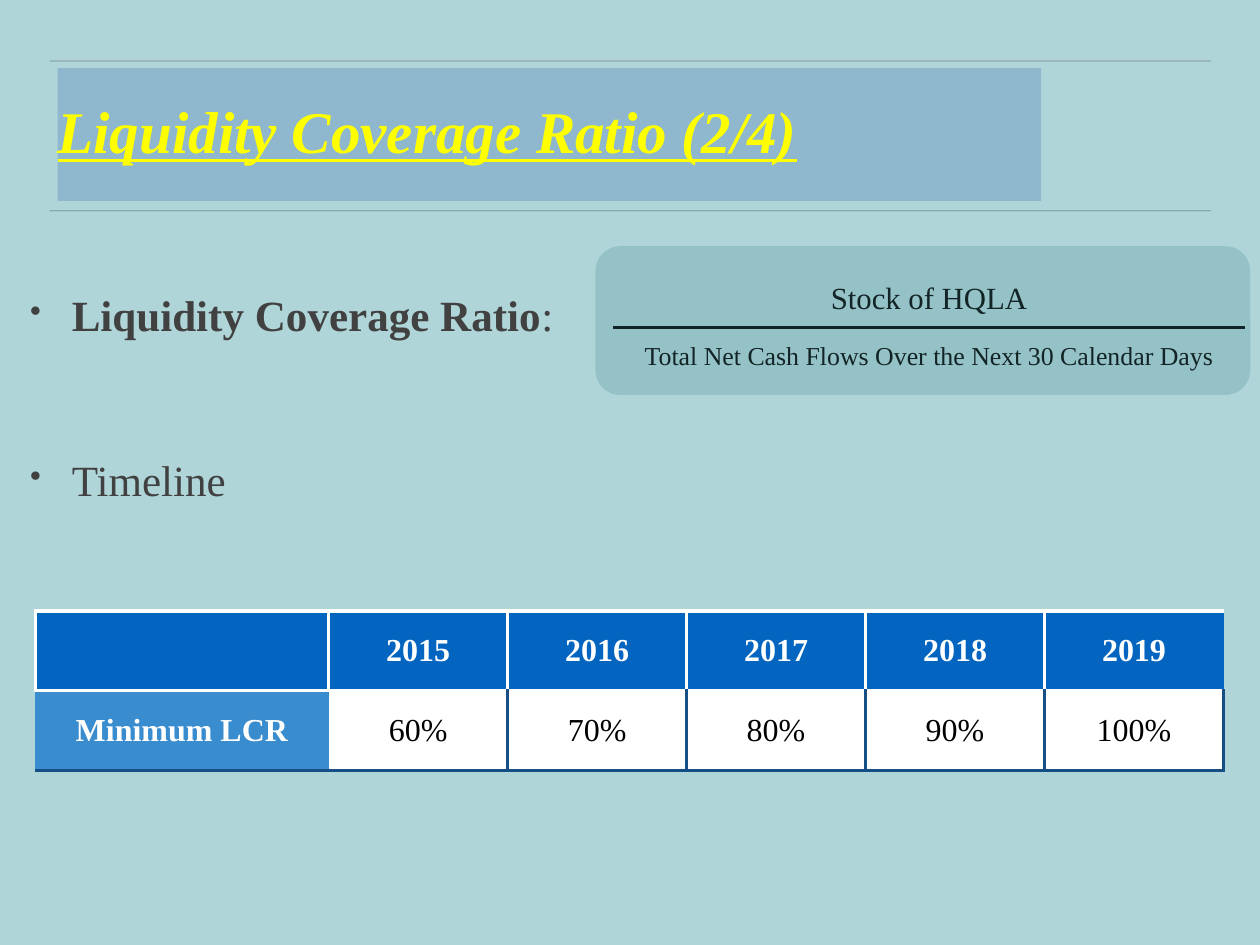
from lxml import etree
from pptx import Presentation
from pptx.dml.color import RGBColor
from pptx.enum.shapes import MSO_CONNECTOR, MSO_SHAPE
from pptx.enum.text import MSO_ANCHOR, PP_ALIGN
from pptx.oxml.ns import qn
from pptx.util import Emu, Pt

PX = 9144  # 100 px to the inch
FONT = "Times New Roman"

BACKGROUND = RGBColor(0xAF, 0xD5, 0xD9)
RULE_GREY = RGBColor(0x44, 0x44, 0x44)
BODY_GREY = RGBColor(0x41, 0x41, 0x41)
TITLE_FILL = RGBColor(0x8F, 0xB8, 0xCE)
YELLOW = RGBColor(0xFF, 0xFF, 0x00)
BLACK = RGBColor(0x00, 0x00, 0x00)
WHITE = RGBColor(0xFF, 0xFF, 0xFF)
HEADER_BLUE = RGBColor(0x03, 0x65, 0xC0)
LABEL_BLUE = RGBColor(0x39, 0x8C, 0xCE)
BORDER_BLUE = RGBColor(0x16, 0x4F, 0x86)
PANEL_TEAL = RGBColor(0x4B, 0x8C, 0x93)

STRAIGHT = MSO_CONNECTOR.STRAIGHT
RECT, ROUNDED = MSO_SHAPE.RECTANGLE, MSO_SHAPE.ROUNDED_RECTANGLE
MIDDLE, TOP = MSO_ANCHOR.MIDDLE, MSO_ANCHOR.TOP
LEFT, CENTER, JUSTIFY = PP_ALIGN.LEFT, PP_ALIGN.CENTER, PP_ALIGN.JUSTIFY


def px(*values):
    return [Emu(v * PX) for v in values]


class SlideBuilder:
    def __init__(self, slide, font):
        self.s = slide
        self.font = font

    def set_alpha(self, element, percent):
        color = next(element.iter(qn("a:srgbClr")))
        etree.SubElement(color, qn("a:alpha"), val=str(percent * 1000))

    def line(self, x1, y1, x2, y2, color, width, alpha=None):
        c = self.s.shapes.add_connector(STRAIGHT, *px(x1, y1, x2, y2))
        c.line.color.rgb = color
        c.line.width = Pt(width)
        if alpha:
            self.set_alpha(c.line._ln, alpha)
        etree.SubElement(c._element.spPr, qn("a:effectLst"))

    def shape(self, kind, box, fill, alpha=None):
        sp = self.s.shapes.add_shape(kind, *px(*box))
        sp.shadow.inherit = False
        sp.fill.solid()
        sp.fill.fore_color.rgb = fill
        sp.line.fill.background()
        if alpha:
            self.set_alpha(sp._element.spPr, alpha)
        return sp

    def text_box(self, box, inset, anchor=MIDDLE):
        sp = self.s.shapes.add_textbox(*px(*box))
        self.frame(sp.text_frame, inset, anchor)
        return sp.text_frame

    def frame(self, tf, inset, anchor):
        tf.word_wrap = True
        tf.vertical_anchor = anchor
        for side in ("left", "top", "right", "bottom"):
            setattr(tf, f"margin_{side}", px(inset)[0])

    def run(self, p, text, size, color, **formats):
        r = p.add_run()
        r.text = text
        r.font.color.rgb = color
        for name, value in {"name": self.font, "size": Pt(size), **formats}.items():
            setattr(r.font, name, value)

    def bullet(self, p, indent):
        pPr = p._p.get_or_add_pPr()
        pPr.set("marL", str(indent * PX))
        pPr.set("indent", str(-indent * PX))
        etree.SubElement(pPr, qn("a:buSzPct"), val="75000")
        etree.SubElement(pPr, qn("a:buChar"), char="•")

    def borders(self, cell, colors):
        tcPr = cell._tc.get_or_add_tcPr()
        for side in "LRTB":
            color = colors.get(side)
            ln = etree.SubElement(tcPr, qn(f"a:ln{side}"), w=str(Pt(3)) if color else "0")
            if color:
                fill = etree.SubElement(ln, qn("a:solidFill"))
                etree.SubElement(fill, qn("a:srgbClr"), val=str(color))
            else:
                etree.SubElement(ln, qn("a:noFill"))

    def cell(self, cell, text, fill, color, bold, borders):
        self.borders(cell, borders)
        cell.fill.solid()
        cell.fill.fore_color.rgb = fill
        cell.vertical_anchor = MIDDLE
        for side in ("left", "top", "right", "bottom"):
            setattr(cell, f"margin_{side}", px(6)[0])
        p = cell.text_frame.paragraphs[0]
        p.alignment = CENTER
        if text:
            self.run(p, text, 26, color, bold=bold)

    def table(self, x, y, widths, row_height, rows):
        size = px(x, y, sum(widths), row_height * len(rows))
        table = self.s.shapes.add_table(len(rows), len(widths), *size).table
        table.first_row = table.horz_banding = False
        for column, width in zip(table.columns, widths):
            column.width = px(width)[0]
        for row in table.rows:
            row.height = px(row_height)[0]
        last = len(widths) - 1
        for i, texts in enumerate(rows):
            for j, text in enumerate(texts):
                if i == 0:
                    fill, color = HEADER_BLUE, WHITE
                    edges = {"L": WHITE, "T": WHITE, "B": WHITE,
                             "R": WHITE if j < last else None}
                else:
                    fill, color = (WHITE, BLACK) if j else (LABEL_BLUE, WHITE)
                    edges = {"T": WHITE, "B": BORDER_BLUE,
                             "L": BORDER_BLUE if j > 1 else None,
                             "R": BORDER_BLUE if j > 0 else None}
                self.cell(table.cell(i, j), text, fill, color, color == WHITE, edges)


def main():
    prs = Presentation()
    prs.slide_width, prs.slide_height = px(1422, 1067)
    s = prs.slides.add_slide(prs.slide_layouts[6])
    s.background.fill.solid()
    s.background.fill.fore_color.rgb = BACKGROUND
    b = SlideBuilder(s, FONT)

    # Title between two hairlines
    for y in (238, 69):
        b.line(56, y, 1367, y, RULE_GREY, 1, alpha=30)
    title = b.shape(RECT, (65, 77, 1110, 150), TITLE_FILL)
    b.frame(title.text_frame, 0, MIDDLE)
    p = title.text_frame.paragraphs[0]
    p.alignment = LEFT
    p.line_spacing = 0.9
    b.run(p, "Liquidity Coverage Ratio (2/4)", 48, YELLOW,
          bold=True, italic=True, underline=True)

    # Bulleted points
    tf = b.text_box((34, 326, 1354, 712), 0, TOP)
    points = [[("Liquidity Coverage Ratio", True), (":", False)], [("Timeline", False)]]
    for i, parts in enumerate(points):
        p = tf.add_paragraph() if i else tf.paragraphs[0]
        b.bullet(p, 47)
        p.alignment = JUSTIFY
        if i:
            p.space_before = Pt(92)
        for text, bold in parts:
            b.run(p, text, 35, BODY_GREY, bold=bold)

    # Ratio formula
    formula = [
        ("Stock of HQLA", (787, 309, 523, 53), 25),
        ("Total Net Cash Flows Over the Next 30 Calendar Days", (634, 378, 829, 46), 21),
    ]
    for text, box, size in formula:
        p = b.text_box(box, 6).paragraphs[0]
        p.alignment = CENTER
        b.run(p, text, size, BLACK)
    b.line(692, 370, 1405, 370, BLACK, 2)

    # Timeline table
    b.table(40, 690, [331] + [202] * 5, 90, [
        ["", "2015", "2016", "2017", "2018", "2019"],
        ["Minimum LCR", "60%", "70%", "80%", "90%", "100%"],
    ])

    # Translucent panel over the formula
    b.shape(ROUNDED, (672, 278, 739, 168), PANEL_TEAL, alpha=26)

    prs.save("out.pptx")


if __name__ == "__main__":
    main()
